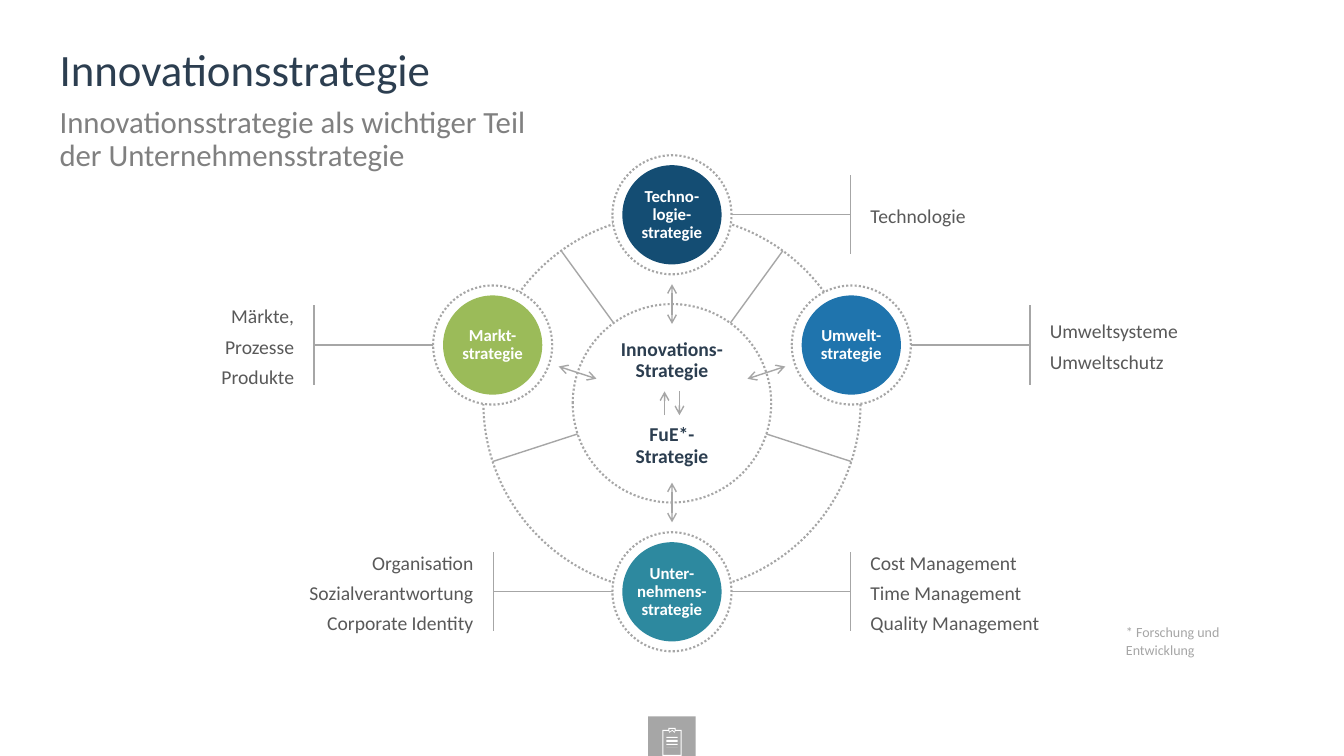
from dataclasses import dataclass
from math import cos, radians, sin

from lxml import etree
from pptx import Presentation, util as u
from pptx.dml.color import RGBColor
from pptx.enum import dml, shapes, text
from pptx.oxml.ns import qn

CELL = u.Mm(2.5)
WIDE, HIGH = u.Inches(13.33), u.Inches(7.5)
MID_X, MID_Y = WIDE / 2 / CELL, 40.65
ORBIT, HUB, HALO, DISC = 19, 10, 6, 5
GREY, WHITE, NAVY = "A6A6A6", "FFFFFF", "2C3E50"
LEFT, RIGHT = -1, 1
Point = tuple[float, float]


@dataclass
class Style:
    size: int
    color: str
    bold: bool = False
    align: text.PP_ALIGN = text.PP_ALIGN.LEFT
    lead: float = 0.9
    before: int = 0
    after: int = 0


@dataclass
class Note:
    side: int
    items: list[str]


@dataclass
class Topic:
    name: str
    angle: int
    color: str
    notes: list[Note]


TOPICS = [
    Topic("Techno-\nlogie-\nstrategie", -90, "144D73", [Note(RIGHT, ["Technologie"])]),
    Topic("Umwelt-\nstrategie", -18, "1F74AD",
          [Note(RIGHT, ["Umweltsysteme", "Umweltschutz"])]),
    Topic("Unter-\nnehmens-\nstrategie", 90, "2D899F", [
        Note(RIGHT, ["Cost Management", "Time Management", "Quality Management"]),
        Note(LEFT, ["Organisation", "Sozialverantwortung", "Corporate Identity"])]),
    Topic("Markt-\nstrategie", 198, "9BBB59",
          [Note(LEFT, ["Märkte,", "Prozesse", "Produkte"])]),
]
SPOKES = [-54, 18, 162, 234]

# Clipboard contours in hundredths of an inch
STRIPS = [[(4, y), (15, y), (15, y + 1), (4, y + 1)] for y in (9, 12.5, 16, 19.5)]
CLIP = [
    [(0, 2), (6, 2), (6, 0), (13, 0), (13, 2), (19, 2), (19, 28), (0, 28)],
    [(1, 3), (1, 27), (18, 27), (18, 3), (13, 3), (12, 5), (11, 4),
     (9.5, 3), (8, 4), (7, 5), (6, 3)],
    [(7, 1), (7, 4), (9.5, 2), (12, 4), (12, 1)],
] + STRIPS


def ink(code: str) -> RGBColor:
    return RGBColor.from_string(code)


def polar(radius: float, angle: float) -> Point:
    """Grid point at a radius and clockwise angle around the hub."""
    turn = radians(angle)
    return MID_X + radius * cos(turn), MID_Y + radius * sin(turn)


def span(*cells: float) -> list[u.Emu]:
    return [u.Emu(round(c * CELL)) for c in cells]


def write(frame, lines: list[str], style: Style, anchor=text.MSO_ANCHOR.TOP,
          wrap: bool = True) -> None:
    frame.word_wrap = wrap
    frame.auto_size = text.MSO_AUTO_SIZE.NONE
    frame.vertical_anchor = anchor
    frame.margin_left = frame.margin_right = frame.margin_top = frame.margin_bottom = 0
    for i, line in enumerate(lines):
        para = frame.add_paragraph() if i else frame.paragraphs[0]
        para.alignment, para.line_spacing = style.align, style.lead
        para.space_before = u.Pt(style.before if i else 0)
        para.space_after = u.Pt(style.after)
        for j, part in enumerate(line.split("\n")):
            if j:
                para.add_line_break()
            run = para.add_run()
            run.text = part
            font = run.font
            font.name, font.size, font.bold = "Calibri", u.Pt(style.size), style.bold
            font.color.rgb = ink(style.color)


def head(holder, top: float, line: str, style: Style) -> None:
    holder.left, holder.top, holder.width, holder.height = span(6, top, 123.4, 6)
    write(holder.text_frame, [line], style)


def label(pool, box: list[u.Emu], lines: list[str], style: Style,
          anchor=text.MSO_ANCHOR.TOP) -> None:
    write(pool.add_textbox(*box).text_frame, lines, style, anchor)


def paint(shape, fill: str | None) -> None:
    shape.shadow.inherit = False
    if fill:
        shape.fill.solid()
        shape.fill.fore_color.rgb = ink(fill)
    else:
        shape.fill.background()
    shape.line.fill.background()


def disc(pool, spot: Point, radius: float, fill: str | None, dotted: bool = False):
    x, y = spot
    oval = pool.add_shape(shapes.MSO_SHAPE.OVAL,
                          *span(x - radius, y - radius, 2 * radius, 2 * radius))
    paint(oval, fill)
    if dotted:
        oval.line.color.rgb = ink(GREY)
        oval.line.width = u.Pt(1.5)
        oval.line.dash_style = dml.MSO_LINE.ROUND_DOT
    return oval


def link(pool, start: Point, end: Point, tips: tuple[str, ...] = ()) -> None:
    wire = pool.add_connector(shapes.MSO_CONNECTOR.STRAIGHT, *span(*start, *end))
    wire.line.color.rgb = ink(GREY)
    wire.line.width = u.Pt(1)
    props = wire.element.spPr
    for tip in tips:
        etree.SubElement(props.find(qn("a:ln")), qn(f"a:{tip}"), type="arrow")
    etree.SubElement(props, qn("a:effectLst"))


def callout(pool, spot: Point, note: Note) -> None:
    x, y = spot
    bar = x + note.side * 18
    link(pool, (bar, y - 4), (bar, y + 4))
    link(pool, (bar, y), (x + note.side * HALO, y))
    left = bar + 2 if note.side == RIGHT else bar - 22
    align = text.PP_ALIGN.LEFT if note.side == RIGHT else text.PP_ALIGN.RIGHT
    label(pool, span(left, y - 5, 20, 10), note.items,
          Style(14, "595959", align=align, lead=1.1, after=3), text.MSO_ANCHOR.MIDDLE)


def badge(pool) -> None:
    """Clipboard on a grey tab at the foot of the slide."""
    tab = pool.add_shape(shapes.MSO_SHAPE.RECTANGLE,
                         *span(MID_X - 2.4, HIGH / CELL - 4, 4.8, 4))
    paint(tab, GREY)
    pen = None
    for ring in CLIP:
        if pen is None:
            pen = pool.build_freeform(*ring[0], scale=u.Inches(0.01))
        else:
            pen.move_to(*ring[0])
        pen.add_line_segments(ring[1:], close=True)
    paint(pen.convert_to_shape(u.Inches(6.57), u.Inches(7.22)), WHITE)


def main() -> None:
    deck = Presentation()
    deck.slide_width, deck.slide_height = WIDE, HIGH
    slide = deck.slides.add_slide(deck.slide_layouts[1])
    pool = slide.shapes
    head(pool.title, 4.8, "Innovationsstrategie", Style(32, NAVY))
    body = slide.placeholders[1]
    props = body.text_frame.paragraphs[0]._p.get_or_add_pPr()
    props.set("marL", "0")
    props.set("indent", "0")
    etree.SubElement(props, qn("a:buNone"))
    head(body, 10.8, "Innovationsstrategie als wichtiger Teil\nder Unternehmensstrategie",
         Style(22, "808080", after=10))

    hub = (MID_X, MID_Y)
    mid = text.PP_ALIGN.CENTER
    disc(pool, hub, ORBIT, None, dotted=True)
    for angle in SPOKES:
        link(pool, hub, polar(ORBIT, angle))
    core = disc(pool, hub, HUB, WHITE, dotted=True)
    write(core.text_frame, ["Innovations-\nStrategie", "FuE*-\nStrategie"],
          Style(14, NAVY, True, mid, before=31), text.MSO_ANCHOR.MIDDLE, wrap=False)
    for topic in TOPICS:
        spot = polar(ORBIT, topic.angle)
        disc(pool, spot, HALO, WHITE, dotted=True)
        face = disc(pool, spot, DISC, topic.color)
        write(face.text_frame, [topic.name], Style(12, WHITE, True, mid),
              text.MSO_ANCHOR.MIDDLE, wrap=False)
        link(pool, polar(12, topic.angle), polar(8, topic.angle), ("headEnd", "tailEnd"))
        for note in topic.notes:
            callout(pool, spot, note)
    for way in (LEFT, RIGHT):
        x = MID_X + way * 0.75
        link(pool, (x, MID_Y - way * 1.2), (x, MID_Y + way * 1.2), ("tailEnd",))
    label(pool, span(MID_X + 45.75, MID_Y + 22, 16, 8), ["* Forschung und Entwicklung"],
          Style(10, GREY, lead=1.1))
    badge(pool)
    deck.save("out.pptx")


if __name__ == "__main__":
    main()
